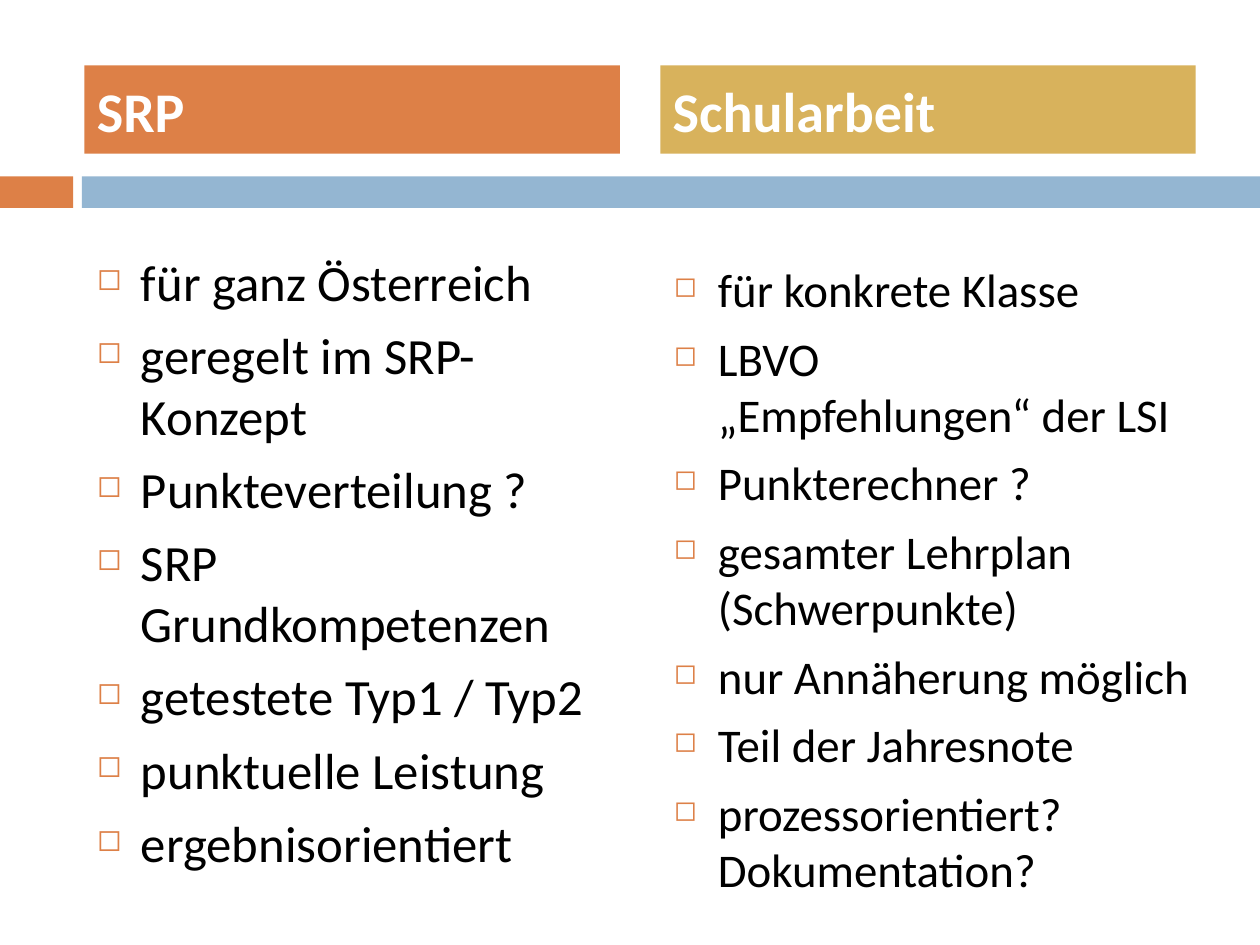
from lxml import etree
from pptx import Presentation
from pptx.dml.color import RGBColor
from pptx.enum.shapes import MSO_SHAPE
from pptx.enum.text import MSO_ANCHOR, PP_ALIGN
from pptx.oxml.ns import qn
from pptx.util import Inches, Pt

RECTANGLE = MSO_SHAPE.RECTANGLE
MIDDLE, TOP = MSO_ANCHOR.MIDDLE, MSO_ANCHOR.TOP
LEFT = PP_ALIGN.LEFT

ORANGE = RGBColor(0xDD, 0x80, 0x47)
BLUE = RGBColor(0x94, 0xB6, 0xD2)
GOLD = RGBColor(0xD8, 0xB2, 0x5C)
WHITE = RGBColor(0xFF, 0xFF, 0xFF)
BLACK = RGBColor(0, 0, 0)

FONT = "Calibri"
SLIDE_WIDTH, SLIDE_HEIGHT = 10, 7.5
HEADING_TOP, HEADING_WIDTH, HEADING_HEIGHT = 0.52, 4.25, 0.7
BAND_TOP, BAND_HEIGHT = 1.4, 0.25
ACCENT_WIDTH, BAND_LEFT = 0.58, 0.65
LIST_BOTTOM = 6.9
BULLET_INDENT = 0.35

# One entry per column of the comparison
COLUMNS = [
    dict(
        heading="SRP", color=ORANGE, left=0.67,
        list_left=0.67, list_top=1.94, list_width=4.25, size=29,
        points=[
            "für ganz Österreich",
            "geregelt im SRP-Konzept",
            "Punkteverteilung ?",
            "SRP Grundkompetenzen",
            "getestete Typ1 / Typ2",
            "punktuelle Leistung",
            "ergebnisorientiert",
        ],
    ),
    dict(
        heading="Schularbeit", color=GOLD, left=5.24,
        list_left=5.25, list_top=2.02, list_width=4.47, size=26.8,
        points=[
            "für konkrete Klasse",
            "LBVO\n„Empfehlungen“ der LSI",
            "Punkterechner ?",
            "gesamter Lehrplan (Schwerpunkte)",
            "nur Annäherung möglich",
            "Teil der Jahresnote",
            "prozessorientiert?\nDokumentation?",
        ],
    ),
]


def add_bullet(paragraph):
    """Give the paragraph a hanging indent and a small orange square."""
    properties = paragraph._p.get_or_add_pPr()
    properties.set("marL", str(Inches(BULLET_INDENT)))
    properties.set("indent", str(-Inches(BULLET_INDENT)))
    color = etree.SubElement(properties, qn("a:buClr"))
    etree.SubElement(color, qn("a:srgbClr"), val=str(ORANGE))
    etree.SubElement(properties, qn("a:buSzPct"), val="60000")
    etree.SubElement(properties, qn("a:buChar"), char="◻")


def write_text(shape, paragraphs, *, size, color, bold=False,
               anchor=TOP, bullets=False):
    frame = shape.text_frame
    frame.word_wrap = True
    frame.vertical_anchor = anchor
    for index, text in enumerate(paragraphs):
        paragraph = frame.add_paragraph() if index else frame.paragraphs[0]
        paragraph.text = text
        paragraph.alignment = LEFT
        paragraph.space_before = Pt(7)
        if bullets:
            add_bullet(paragraph)
        for run in paragraph.runs:
            run.font.name = FONT
            run.font.size = Pt(size)
            run.font.bold = bold
            run.font.color.rgb = color


def add_bar(slide, left, top, width, height, color):
    bar = slide.shapes.add_shape(
        RECTANGLE, Inches(left), Inches(top), Inches(width), Inches(height))
    bar.shadow.inherit = False
    bar.fill.solid()
    bar.fill.fore_color.rgb = color
    bar.line.fill.background()
    return bar


def add_column(slide, column):
    heading = add_bar(slide, column["left"], HEADING_TOP,
                      HEADING_WIDTH, HEADING_HEIGHT, column["color"])
    write_text(heading, [column["heading"]], size=32, color=WHITE,
               bold=True, anchor=MIDDLE)

    points = slide.shapes.add_textbox(
        Inches(column["list_left"]), Inches(column["list_top"]),
        Inches(column["list_width"]),
        Inches(LIST_BOTTOM - column["list_top"]))
    write_text(points, column["points"], size=column["size"],
               color=BLACK, bullets=True)


def main():
    presentation = Presentation()
    presentation.slide_width = Inches(SLIDE_WIDTH)
    presentation.slide_height = Inches(SLIDE_HEIGHT)
    blank_layout = presentation.slide_layouts[6]
    slide = presentation.slides.add_slide(blank_layout)

    # Dividing band with its accent at the left edge
    add_bar(slide, 0, BAND_TOP, ACCENT_WIDTH, BAND_HEIGHT, ORANGE)
    add_bar(slide, BAND_LEFT, BAND_TOP, SLIDE_WIDTH - BAND_LEFT,
            BAND_HEIGHT, BLUE)

    # Headings and bullet lists
    for column in COLUMNS:
        add_column(slide, column)

    presentation.save("out.pptx")


if __name__ == "__main__":
    main()
